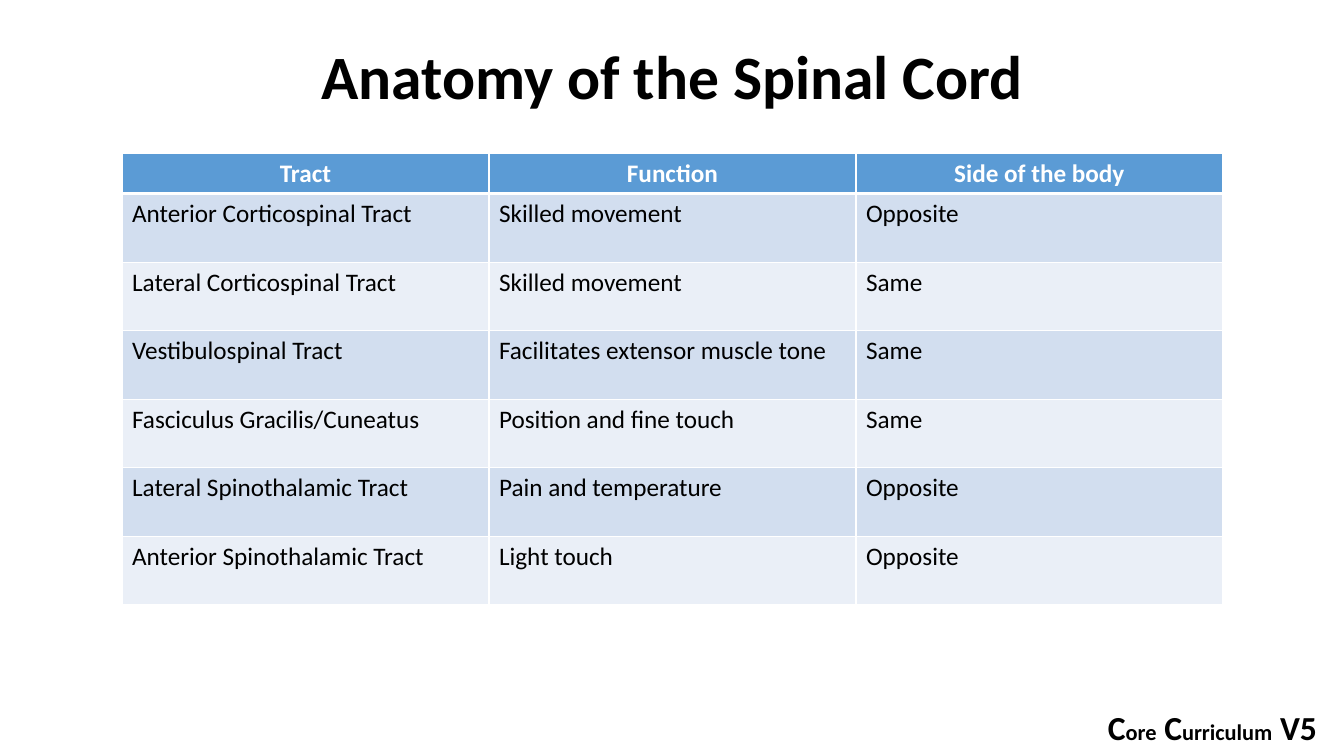
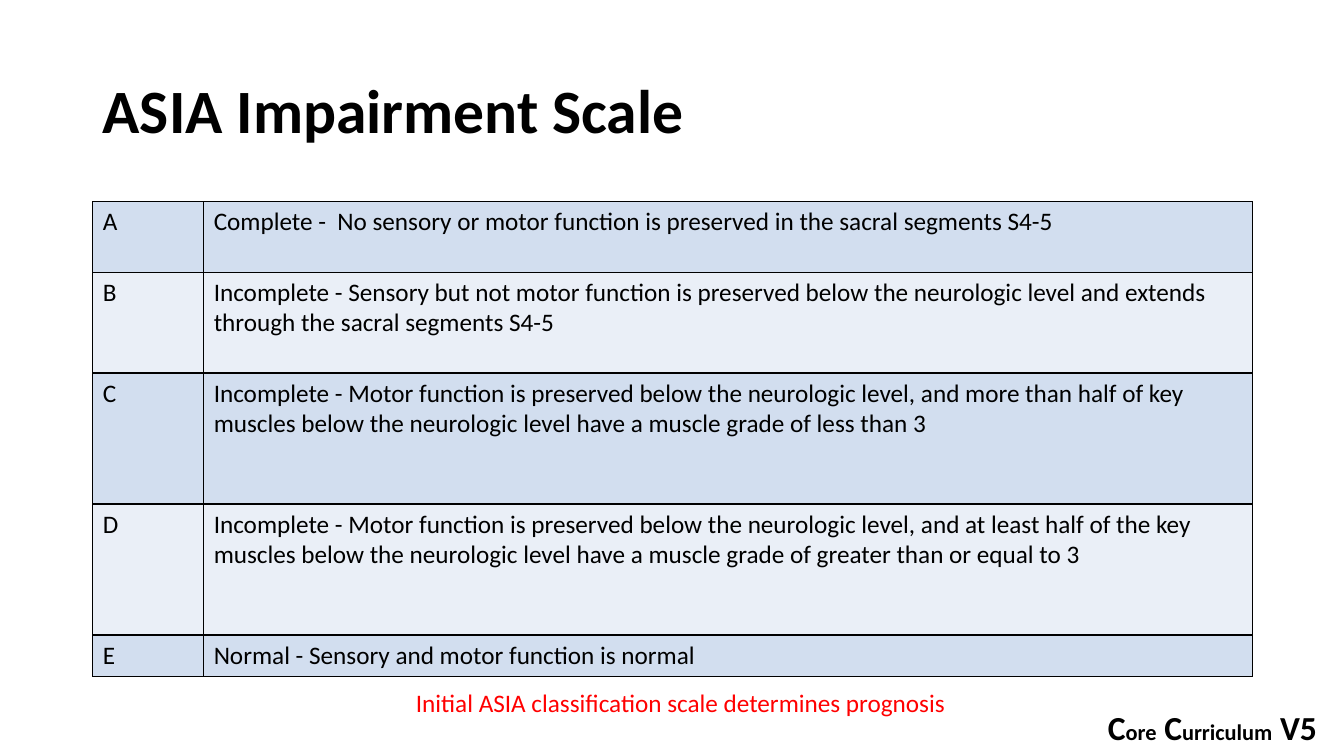
"""Build two slides on spinal cord tracts and the ASIA impairment scale."""
from dataclasses import dataclass

from lxml.etree import SubElement
from pptx import Presentation
from pptx.dml.color import RGBColor
from pptx.enum.text import MSO_ANCHOR as Anchor, MSO_AUTO_SIZE as AutoSize, PP_ALIGN as Align
from pptx.oxml.ns import qn
from pptx.slide import Slide
from pptx.text.text import TextFrame
from pptx.util import Emu, Pt

PX = 9144
FONT = "Calibri"
BLACK = RGBColor(0x00, 0x00, 0x00)
WHITE = RGBColor(0xFF, 0xFF, 0xFF)
RED = RGBColor(0xFF, 0x00, 0x00)
HEADER_BLUE = RGBColor(0x5B, 0x9B, 0xD5)
BANDS = (RGBColor(0xD2, 0xDE, 0xEF), RGBColor(0xEA, 0xEF, 0xF7))


@dataclass(frozen=True)
class Area:
    left: int
    top: int
    width: int
    height: int

    def emu(self) -> tuple[Emu, ...]:
        return tuple(px(n) for n in (self.left, self.top, self.width, self.height))


@dataclass(frozen=True)
class Span:
    text: str
    size: int


@dataclass(frozen=True)
class Grid:
    left: int
    top: int
    columns: tuple[int, ...]
    heights: tuple[int, ...]
    rows: tuple[tuple[str, ...], ...]
    border: RGBColor
    header: bool = False


FOOTER = Area(1089, 696, 235, 50)
FOOTER_SPANS = (Span("C", 24), Span("ore", 16), Span(" C", 24),
                Span("urriculum", 16), Span(" V5", 24))
TITLE_LEFT, TITLE_WIDTH, TITLE_HEIGHT = 92, 1150, 145

TRACTS = Grid(
    121, 152, (364,) * 3, (39,) + (68,) * 6,
    (
        ("Tract", "Function", "Side of the body"),
        ("Anterior Corticospinal Tract", "Skilled movement", "Opposite"),
        ("Lateral Corticospinal Tract", "Skilled movement", "Same"),
        ("Vestibulospinal Tract", "Facilitates extensor muscle tone", "Same"),
        ("Fasciculus Gracilis/Cuneatus", "Position and fine touch", "Same"),
        ("Lateral Spinothalamic Tract", "Pain and temperature", "Opposite"),
        ("Anterior Spinothalamic Tract", "Light touch", "Opposite"),
    ),
    WHITE, header=True,
)
GRADES = Grid(
    92, 200, (110, 1040), (70, 100, 130, 130, 41),
    (
        ("A", "Complete -  No sensory or motor function is preserved in the "
              "sacral segments S4-5"),
        ("B", "Incomplete - Sensory but not motor function is preserved below the "
              "neurologic level and extends through the sacral segments S4-5"),
        ("C", "Incomplete - Motor function is preserved below the neurologic level, and "
              "more than half of key muscles below the neurologic level have a muscle "
              "grade of less than 3"),
        ("D", "Incomplete - Motor function is preserved below the neurologic level, and "
              "at least half of the key muscles below the neurologic level have a muscle "
              "grade of greater than or equal to 3"),
        ("E", "Normal - Sensory and motor function is normal"),
    ),
    BLACK,
)


def px(length: int) -> Emu:
    return Emu(length * PX)


def write(frame: TextFrame, *spans: Span, color: RGBColor = BLACK, bold: bool = False,
          align: Align = Align.LEFT, spacing: float = 1.0) -> None:
    para = frame.paragraphs[0]
    para.alignment = align
    para.line_spacing = spacing
    for span in spans:
        run = para.add_run()
        run.text = span.text
        run.font.name = FONT
        run.font.size = Pt(span.size)
        run.font.bold = bold
        run.font.color.rgb = color


def add_box(page: Slide, area: Area, anchor: Anchor = Anchor.TOP,
            wrap: bool = True, grow: bool = False) -> TextFrame:
    frame = page.shapes.add_textbox(*area.emu()).text_frame
    frame.word_wrap = wrap
    frame.vertical_anchor = anchor
    frame.auto_size = AutoSize.SHAPE_TO_FIT_TEXT if grow else AutoSize.NONE
    return frame


def add_title(page: Slide, text: str, top: int, align: Align = Align.LEFT) -> None:
    area = Area(TITLE_LEFT, top, TITLE_WIDTH, TITLE_HEIGHT)
    write(add_box(page, area, Anchor.MIDDLE), Span(text, 44),
          bold=True, align=align, spacing=0.9)


def set_borders(cell, color: RGBColor, top: int, bottom: int) -> None:
    properties = cell._tc.get_or_add_tcPr()
    for side, width in (("L", 1), ("R", 1), ("T", top), ("B", bottom)):
        line = SubElement(properties, qn(f"a:ln{side}"), w=str(Pt(width)))
        fill = SubElement(line, qn("a:solidFill"))
        SubElement(fill, qn("a:srgbClr"), val=str(color))


def add_grid(page: Slide, grid: Grid) -> None:
    area = Area(grid.left, grid.top, sum(grid.columns), sum(grid.heights))
    table = page.shapes.add_table(len(grid.rows), len(grid.columns), *area.emu()).table
    table.first_row = grid.header
    table.horz_banding = False
    for column, width in zip(table.columns, grid.columns):
        column.width = px(width)
    for index, (row, height, texts) in enumerate(zip(table.rows, grid.heights, grid.rows)):
        row.height = px(height)
        is_header = grid.header and index == 0
        top = 3 if grid.header and index == 1 else 1
        band = BANDS[(index - grid.header) % len(BANDS)]
        for cell, text in zip(row.cells, texts):
            set_borders(cell, grid.border, top, 3 if is_header else 1)
            cell.fill.solid()
            cell.fill.fore_color.rgb = HEADER_BLUE if is_header else band
            write(cell.text_frame, Span(text, 18), bold=is_header,
                  color=WHITE if is_header else BLACK,
                  align=Align.CENTER if is_header else Align.LEFT)


def add_page(deck) -> Slide:
    page = deck.slides.add_slide(deck.slide_layouts[6])
    write(add_box(page, FOOTER, wrap=False, grow=True), *FOOTER_SPANS, bold=True)
    return page


def main() -> None:
    deck = Presentation()
    deck.slide_width, deck.slide_height = px(1333), px(750)

    tracts = add_page(deck)
    add_grid(tracts, TRACTS)
    add_title(tracts, "Anatomy of the Spinal Cord", 6, Align.CENTER)

    scale = add_page(deck)
    add_title(scale, "ASIA Impairment Scale", 40)
    add_grid(scale, GRADES)
    write(add_box(scale, Area(282, 677, 786, 40), grow=True),
          Span("Initial ASIA classification scale determines prognosis", 18),
          color=RED, align=Align.CENTER)

    deck.save("out.pptx")


if __name__ == "__main__":
    main()
